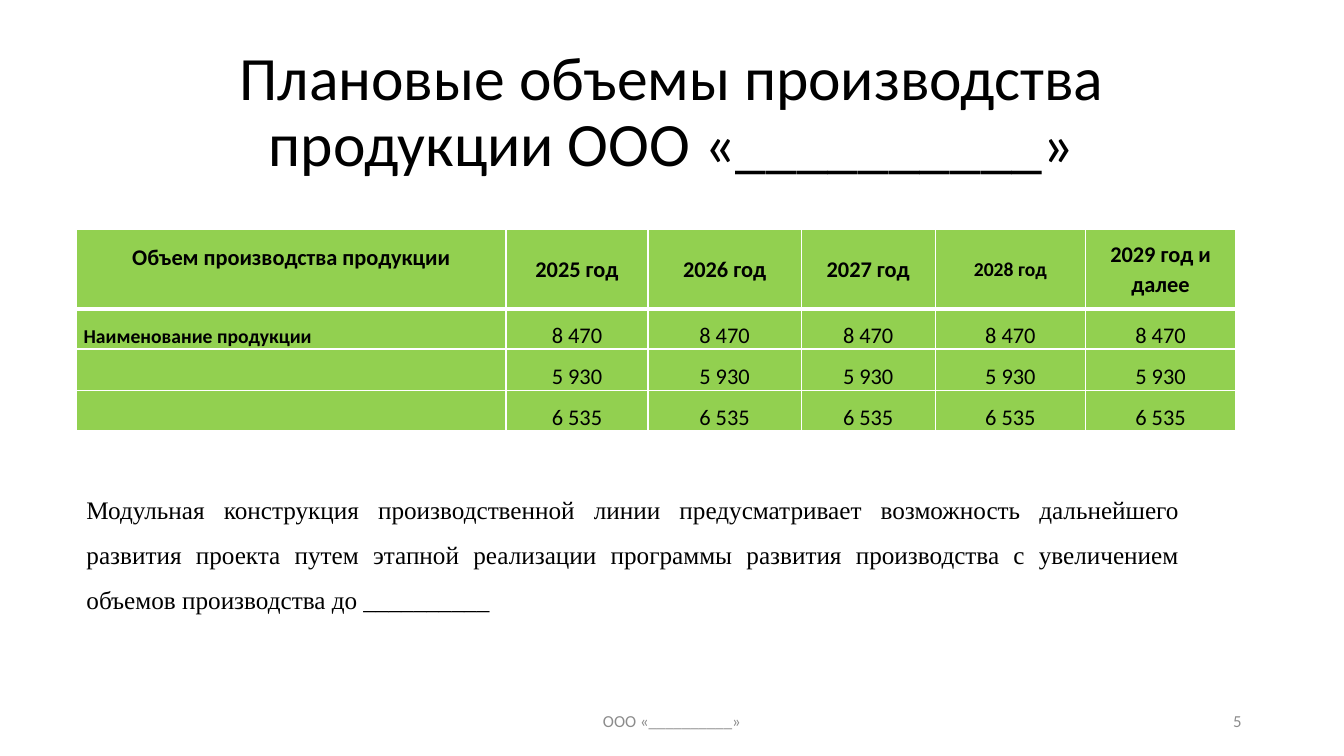
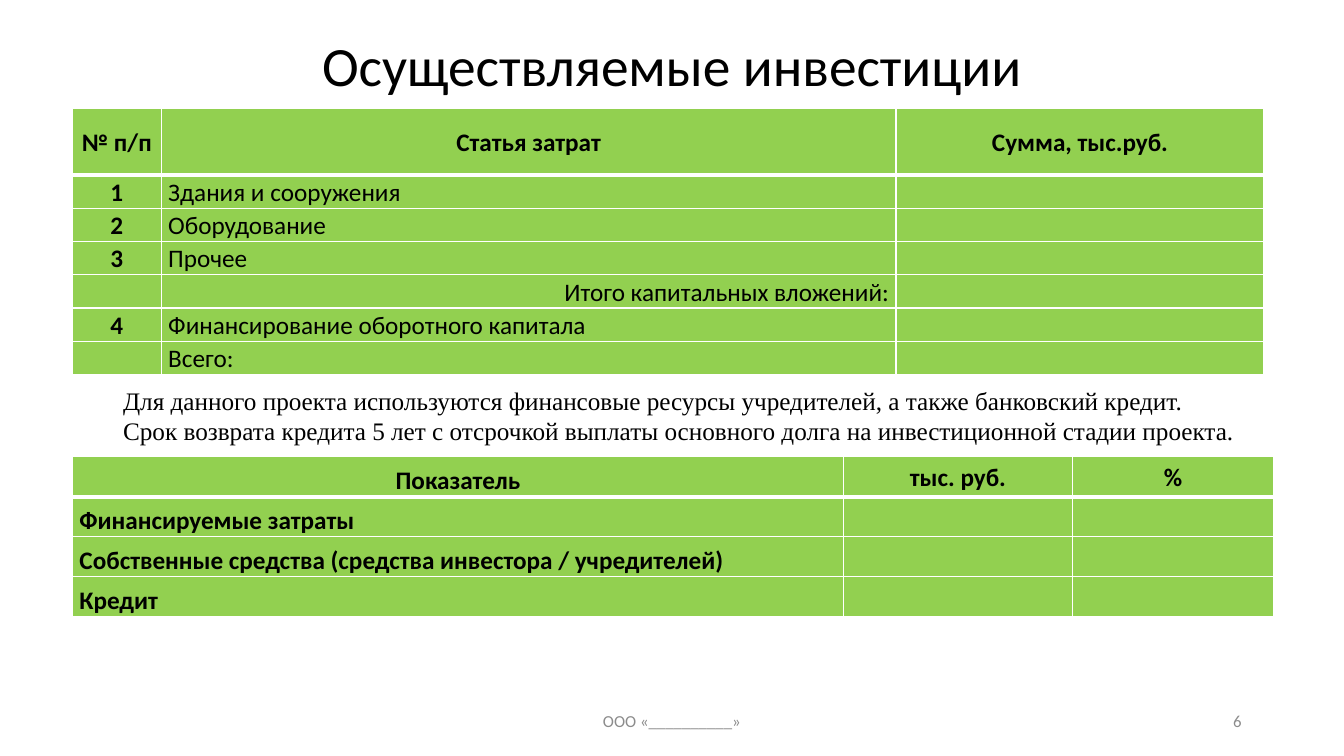
"""Build two slides on planned production volumes and project investments."""
from lxml import etree
from pptx import Presentation
from pptx.dml.color import RGBColor
from pptx.enum.text import MSO_ANCHOR, PP_ALIGN
from pptx.oxml.ns import qn
from pptx.util import Pt

BLACK = RGBColor(0x00, 0x00, 0x00)
GRAY = RGBColor(0x8C, 0x8C, 0x8C)
GREEN = RGBColor(0x92, 0xD0, 0x50)
WHITE = RGBColor(0xFF, 0xFF, 0xFF)

LEFT, CENTER, RIGHT = PP_ALIGN.LEFT, PP_ALIGN.CENTER, PP_ALIGN.RIGHT
JUSTIFY = PP_ALIGN.JUSTIFY
TOP, MIDDLE, BOTTOM = MSO_ANCHOR.TOP, MSO_ANCHOR.MIDDLE, MSO_ANCHOR.BOTTOM

SANS, SERIF = "Calibri", "Times New Roman"
COMPANY = "ООО «__________»"
BLANK_LAYOUT = 6
THIN, THICK = 1, 3
FOOTER_TOP, FOOTER_HEIGHT = 500.4, 28.8


def text_style(size, align=LEFT, anchor=MIDDLE, spacing=1.0, bold=False,
               font=SANS, color=BLACK):
    """Group format values by the object that takes them."""
    return {
        "anchor": anchor,
        "color": color,
        "paragraph": {"alignment": align, "line_spacing": spacing},
        "font": {"name": font, "size": Pt(size), "bold": bold},
    }


FOOTER = text_style(12, CENTER, color=GRAY)
PAGE_NUMBER = text_style(12, RIGHT, color=GRAY)
NOTE = text_style(18, JUSTIFY, TOP, font=SERIF)
WIDE_NOTE = text_style(18, JUSTIFY, TOP, 1.5, font=SERIF)

YEAR = text_style(16, CENTER, MIDDLE, 1.07, True)
SMALL_YEAR = text_style(14, CENTER, MIDDLE, 1.07, True)
PRODUCT = text_style(14, LEFT, BOTTOM, 1.5, True)
VOLUME = text_style(16, CENTER, BOTTOM, 1.5)

HEADER = text_style(18, CENTER, MIDDLE, 1.07, True)
LOW_HEADER = text_style(18, CENTER, BOTTOM, 1.07, True)
ITEM = text_style(18, LEFT, MIDDLE, 1.07)
LOW_ITEM = text_style(18, LEFT, BOTTOM, 1.07)
TOTAL = text_style(18, RIGHT, BOTTOM, 1.07)
SOURCE = text_style(18, LEFT, BOTTOM, 1.07, True)
EMPTY = ("", ITEM)


def set_attributes(target, values):
    """Set every named value on the target."""
    for name, value in values.items():
        setattr(target, name, value)


def write_paragraph(paragraph, text, style):
    """Fill a paragraph with one formatted run."""
    set_attributes(paragraph, style["paragraph"])
    if text:
        run = paragraph.add_run()
        run.text = text
        set_attributes(run.font, style["font"])
        run.font.color.rgb = style["color"]


def add_text(slide, box, lines, style, indent=0):
    """Add a wrapped text box with one paragraph per line."""
    frame = slide.shapes.add_textbox(*map(Pt, box)).text_frame
    frame.word_wrap = True
    frame.vertical_anchor = style["anchor"]
    for index, line in enumerate(lines):
        paragraph = frame.add_paragraph() if index else frame.paragraphs[0]
        write_paragraph(paragraph, line, style)
        if indent:
            paragraph._p.get_or_add_pPr().set("indent", str(Pt(indent)))


def add_borders(cell, top, bottom):
    """Draw white lines on the four sides of a cell."""
    properties = cell._tc.get_or_add_tcPr()
    widths = {"a:lnL": THIN, "a:lnR": THIN, "a:lnT": top, "a:lnB": bottom}
    for tag, width in widths.items():
        line = etree.SubElement(properties, qn(tag), w=str(Pt(width)))
        fill = etree.SubElement(line, qn("a:solidFill"))
        etree.SubElement(fill, qn("a:srgbClr"), val=str(WHITE))


def format_cell(cell, text, style, row):
    """Write a green table cell, with a thick line under the header row."""
    set_attributes(cell, {
        "margin_left": Pt(5), "margin_right": Pt(5),
        "margin_top": 0, "margin_bottom": 0,
        "vertical_anchor": style["anchor"],
    })
    add_borders(cell, THICK if row == 1 else THIN, THICK if row == 0 else THIN)
    cell.fill.solid()
    cell.fill.fore_color.rgb = GREEN
    write_paragraph(cell.text_frame.paragraphs[0], text, style)


def add_grid(slide, left, top, widths, heights, rows):
    """Add a table from rows of text and style pairs."""
    table = slide.shapes.add_table(
        len(rows), len(widths), Pt(left), Pt(top),
        Pt(sum(widths)), Pt(sum(heights))).table
    table.horz_banding = False
    for column, width in zip(table.columns, widths):
        column.width = Pt(width)
    for table_row, height in zip(table.rows, heights):
        table_row.height = Pt(height)
    for row, pairs in enumerate(rows):
        for column, (text, style) in enumerate(pairs):
            format_cell(table.cell(row, column), text, style, row)
    return table


def add_page(presentation, title, title_size, title_height, number):
    """Add a slide with its title, company footer and page number."""
    slide = presentation.slides.add_slide(
        presentation.slide_layouts[BLANK_LAYOUT])
    title_style = text_style(title_size, CENTER, MIDDLE, 0.9)
    add_text(slide, (66, 28.8, 828, title_height), [title], title_style)
    add_text(slide, (318, FOOTER_TOP, 324, FOOTER_HEIGHT), [COMPANY], FOOTER)
    add_text(slide, (678, FOOTER_TOP, 216, FOOTER_HEIGHT), [str(number)],
             PAGE_NUMBER)
    return slide


def add_production_slide(presentation):
    """Show production volumes by year."""
    slide = add_page(
        presentation, f"Плановые объемы производства продукции {COMPANY}",
        44, 104.4, 5)
    years = [("2025 год", YEAR), ("2026 год", YEAR), ("2027 год", YEAR),
             ("2028 год", SMALL_YEAR), ("2029 год и далее", YEAR)]
    products = [("Наименование продукции", "8 470"),
                ("", "5 930"), ("", "6 535")]
    rows = [[("Объем производства продукции", YEAR), *years]]
    rows += [[(name, PRODUCT)] + [(volume, VOLUME)] * len(years)
             for name, volume in products]
    table = add_grid(slide, 54.7, 163.6,
                     [306.7, 101.5, 109.4, 95.8, 107.3, 107.3],
                     [56.9, 28.5, 29.5, 29], rows)
    table.cell(0, 0).margin_bottom = Pt(17)
    add_text(slide, (54.7, 338.4, 794.9, 102.2), [
        "Модульная конструкция производственной линии предусматривает "
        "возможность дальнейшего развития проекта путем этапной реализации "
        "программы развития производства с увеличением объемов производства "
        "до __________"], WIDE_NOTE)


def add_investment_slide(presentation):
    """Show cost items and funding sources."""
    slide = add_page(presentation, "Осуществляемые инвестиции", 39.6, 41, 6)
    costs = [("1", "Здания и сооружения", ITEM),
             ("2", "Оборудование", ITEM),
             ("3", "Прочее", ITEM),
             ("", "Итого капитальных вложений:", TOTAL),
             ("4", "Финансирование оборотного капитала", LOW_ITEM),
             ("", "Всего:", LOW_ITEM)]
    cost_rows = [[(text, HEADER) for text in
                  ("№ п/п", "Статья затрат", "Сумма, тыс.руб.")]]
    cost_rows += [[(number, LOW_HEADER), (name, style), EMPTY]
                  for number, name, style in costs]
    add_grid(slide, 51.8, 77.4, [63.4, 524.9, 262.8],
             [47.5] + [23.8] * len(costs), cost_rows)

    add_text(slide, (45.4, 271.4, 864.7, 51.1), [
        "Для данного проекта используются финансовые ресурсы учредителей, "
        "а также банковский кредит.",
        "Срок возврата кредита 5 лет с отсрочкой выплаты основного долга "
        "на инвестиционной стадии проекта."], NOTE, indent=35.4)

    sources = ["Финансируемые затраты",
               "Собственные средства (средства инвестора / учредителей)",
               "Кредит"]
    source_rows = [[("Показатель", LOW_HEADER), ("тыс. руб.", HEADER),
                    ("%", HEADER)]]
    source_rows += [[(name, SOURCE), EMPTY, EMPTY] for name in sources]
    add_grid(slide, 51.8, 326.2, [550.8, 163.4, 144],
             [28.6] * len(source_rows), source_rows)


def main():
    """Create and save the presentation."""
    presentation = Presentation()
    presentation.slide_width = Pt(960)
    presentation.slide_height = Pt(540)
    add_production_slide(presentation)
    add_investment_slide(presentation)
    presentation.save("out.pptx")


if __name__ == "__main__":
    main()
